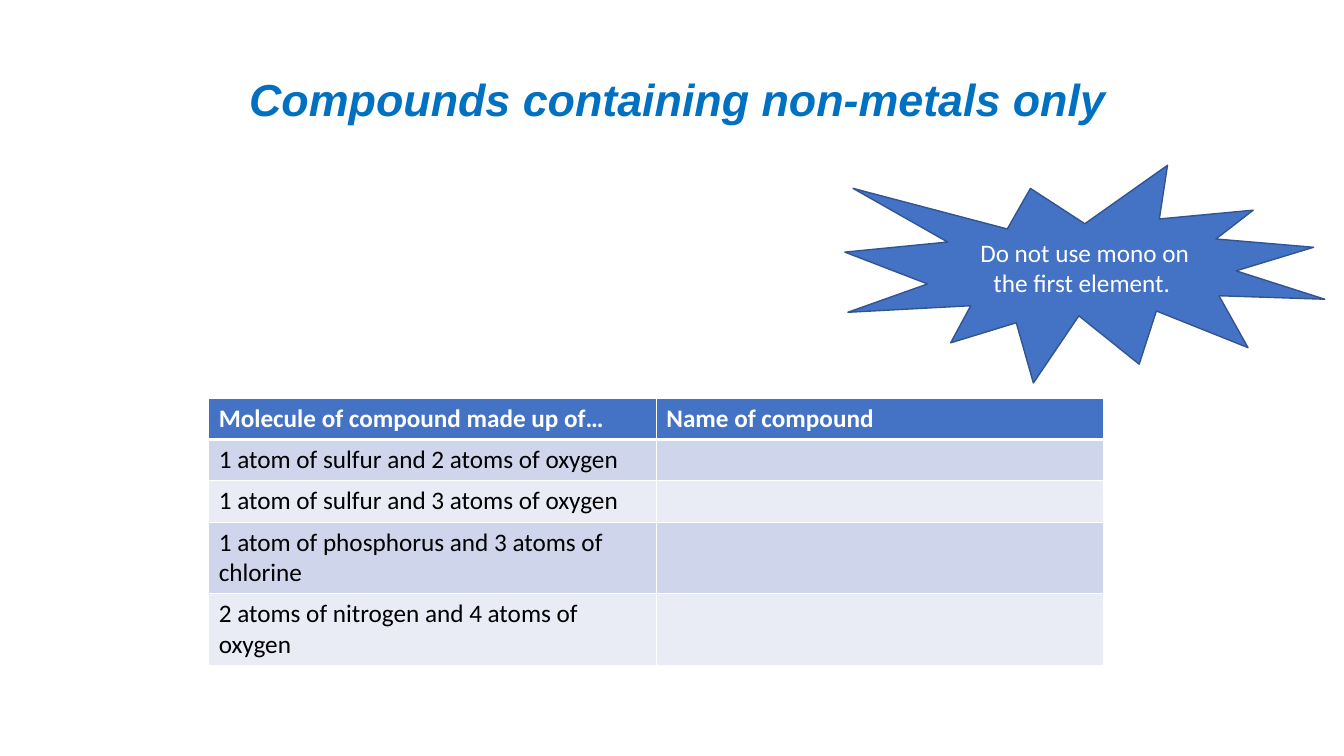
import pptx
import pptx.util
import pptx.dml.color
import pptx.enum.shapes
import pptx.enum.text
import pptx.oxml
import pptx.oxml.ns
from pptx.dml.color import RGBColor
from pptx.util import Inches, Pt

TITLE = "Compounds containing non-metals only "
REMINDER = " Do not use mono on the first element."
ROWS = [
    # first column, second column, row height
    ("Molecule of compound made up of…", "Name of compound", 0.41),
    ("1 atom of sulfur and 2 atoms of oxygen", "", 0.41),
    ("1 atom of sulfur and 3 atoms of oxygen", "", 0.41),
    ("1 atom of phosphorus and 3 atoms of chlorine", "", 0.71),
    ("2 atoms of nitrogen and 4 atoms of oxygen", "", 0.71),
]
COLUMN_WIDTH = 4.44

TITLE_BLUE = RGBColor(0x00, 0x70, 0xC0)
ACCENT = RGBColor(0x44, 0x72, 0xC4)
ACCENT_DARK = RGBColor(0x32, 0x54, 0x91)
BANDS = [RGBColor(0xE9, 0xEB, 0xF5), RGBColor(0xCF, 0xD5, 0xEA)]
WHITE = RGBColor(0xFF, 0xFF, 0xFF)
BLACK = RGBColor(0x00, 0x00, 0x00)


def style(paragraph, name, size, color, bold=False, italic=False):
    font = paragraph.font
    font.name, font.size = name, Pt(size)
    font.bold, font.italic = bold, italic
    font.color.rgb = color


def fill_centred(shape, text):
    """Put centred, wrapped text in a shape and return its paragraph."""
    frame = shape.text_frame
    frame.word_wrap = True
    frame.vertical_anchor = pptx.enum.text.MSO_ANCHOR.MIDDLE
    paragraph = frame.paragraphs[0]
    paragraph.text = text
    paragraph.alignment = pptx.enum.text.PP_ALIGN.CENTER
    return paragraph


def set_borders(cell, widths):
    """Draw white borders; widths maps each side tag to points."""
    properties = cell._tc.get_or_add_tcPr()
    for position, (side, width) in enumerate(widths.items()):
        border = pptx.oxml.parse_xml(
            f'<a:{side} {pptx.oxml.ns.nsdecls("a")} w="{Pt(width)}">'
            f'<a:solidFill><a:srgbClr val="{WHITE}"/></a:solidFill></a:{side}>')
        properties.insert(position, border)


presentation = pptx.Presentation()
presentation.slide_width = Inches(13.33)
presentation.slide_height = Inches(7.5)
slide = presentation.slides.add_slide(presentation.slide_layouts[6])

title = slide.shapes.add_textbox(Inches(2.07), Inches(0.23), Inches(9.43), Inches(1.56))
paragraph = fill_centred(title, TITLE)
paragraph.line_spacing = 0.9
style(paragraph, "Arial", 32, TITLE_BLUE, bold=True, italic=True)

table = slide.shapes.add_table(
    len(ROWS), 2, Inches(2.07), Inches(3.95), Inches(2 * COLUMN_WIDTH),
    Inches(sum(row[-1] for row in ROWS))).table
for column in table.columns:
    column.width = Inches(COLUMN_WIDTH)
for row_index, (*texts, height) in enumerate(ROWS):
    header = row_index == 0
    table.rows[row_index].height = Inches(height)
    for column_index, text in enumerate(texts):
        cell = table.cell(row_index, column_index)
        cell.text = text
        style(cell.text_frame.paragraphs[0], "Calibri", 18,
              WHITE if header else BLACK, bold=header)
        cell.fill.solid()
        cell.fill.fore_color.rgb = ACCENT if header else BANDS[row_index % 2]
        set_borders(cell, {"lnL": 1, "lnR": 1, "lnT": 3 if row_index == 1 else 1,
                           "lnB": 3 if header else 1})

burst = slide.shapes.add_shape(
    pptx.enum.shapes.MSO_SHAPE.EXPLOSION1,
    Inches(8.38), Inches(1.64), Inches(4.76), Inches(2.16))
burst.shadow.inherit = False
burst.fill.solid()
burst.fill.fore_color.rgb = ACCENT
burst.line.color.rgb = ACCENT_DARK
burst.line.width = Pt(1)
style(fill_centred(burst, REMINDER), "Calibri", 18, WHITE)

presentation.save("out.pptx")
